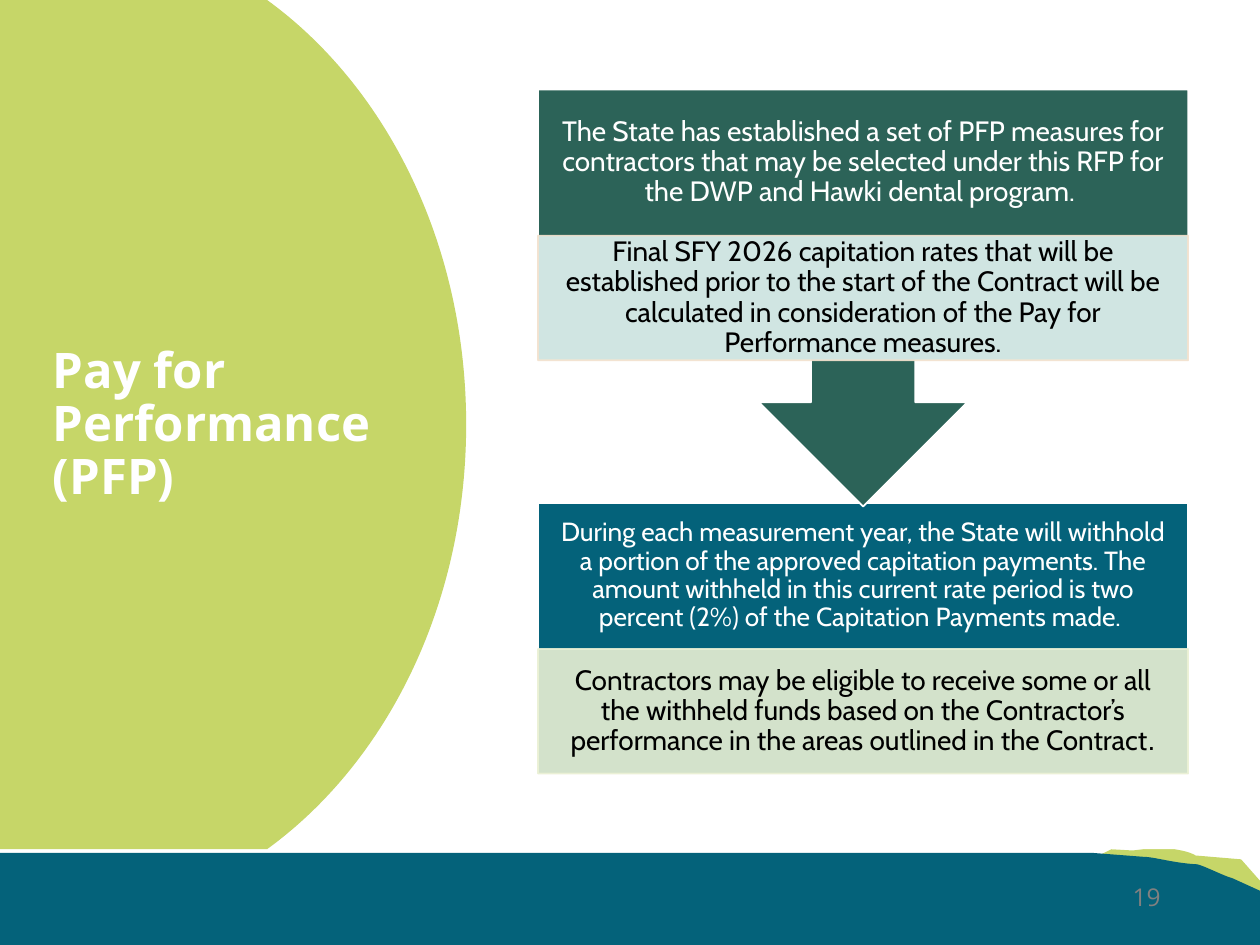
from lxml import etree
from pptx import Presentation
from pptx.dml.color import RGBColor
from pptx.enum.shapes import MSO_SHAPE
from pptx.enum.text import MSO_ANCHOR, PP_ALIGN
from pptx.oxml.ns import qn
from pptx.util import Inches, Pt

RECT, CALLOUT = MSO_SHAPE.RECTANGLE, MSO_SHAPE.UP_ARROW_CALLOUT
MIDDLE = MSO_ANCHOR.MIDDLE
LEFT, CENTER, RIGHT = PP_ALIGN.LEFT, PP_ALIGN.CENTER, PP_ALIGN.RIGHT
COLORS = {name: RGBColor.from_string(value) for name, value in {
    "white": "FFFFFF", "black": "000000", "gray": "808080",
    "lime": "C6D668", "teal": "04627A", "green": "2C6358",
    "pale_lime": "EAF0D4", "pale_green": "E2F4F1", "sand": "F3E1CD",
}.items()}
UNITS = 1000  # outline units per inch

prs = Presentation()
prs.slide_width, prs.slide_height = Inches(10), Inches(7.5)
slide = prs.slides.add_slide(prs.slide_layouts[5])
shapes = slide.shapes


def paint(shape, fill, line=None, opacity=None):
    """Set fill and line, with an optional opacity in percent for both."""
    shape.shadow.inherit = False
    shape.fill.solid()
    shape.fill.fore_color.rgb = COLORS[fill]
    if line:
        shape.line.color.rgb = COLORS[line]
        shape.line.width = Pt(1)
    else:
        shape.line.fill.background()
    if opacity:
        for color in shape._element.spPr.iter(qn("a:srgbClr")):
            etree.SubElement(color, qn("a:alpha"), val=str(opacity * 1000))


def draw_outline(start, segments, fill):
    """Draw a closed outline; six numbers in a segment make a Bezier curve."""
    points = [(segment[i] * UNITS, segment[i + 1] * UNITS)
              for segment in segments for i in range(0, len(segment), 2)]
    builder = shapes.build_freeform(start[0] * UNITS, start[1] * UNITS,
                                    scale=Inches(1) / UNITS)
    builder.add_line_segments(points, close=True)
    outline = builder.convert_to_shape()
    # Join the three points of each curve into one curve element
    lines = iter(list(outline._element.iter(qn("a:lnTo"))))
    for segment in segments:
        first = next(lines)
        if len(segment) == 6:
            first.tag = qn("a:cubicBezTo")
            for extra in (next(lines), next(lines)):
                first.append(extra[0])
                extra.getparent().remove(extra)
    paint(outline, fill)


# Footer hills
draw_outline((8.82, 6.74),
             [(8.62, 6.84), (10.01, 7.11), (10, 6.99), (9.85, 6.82), (9.49, 6.79),
              (9.42, 6.75, 9.36, 6.75, 9.23, 6.72), (8.99, 6.75)], "lime")
draw_outline((0, 6.77),
             [(8.68, 6.77), (9.07, 6.8), (9.16, 6.8, 9.31, 6.85, 9.5, 6.86),
              (9.53, 6.86, 9.73, 6.96, 9.78, 6.97), (10, 7.07), (10, 7.5), (0, 7.5)], "teal")

# Content area and the rounded title panel
content_height = 6.74
content_area = shapes.add_shape(RECT, 0, 0, prs.slide_width, Inches(content_height))
paint(content_area, "white")
draw_outline((0, 0),
             [(2.12, 0), (3.07, 0.69, 3.7, 1.94, 3.7, 3.37),
              (3.7, 4.8, 3.07, 6.05, 2.12, content_height), (0, content_height)], "lime")

# Title, brought in front of its panel
title = shapes.title
shapes._spTree.append(title._element)
title.left, title.top, title.width, title.height = map(Inches, (0.32, 0.64, 3.39, 5.47))
title.text_frame.word_wrap = True
title.text_frame.vertical_anchor = MIDDLE
heading = title.text_frame.paragraphs[0]
heading.text = "Pay for Performance (PFP)"
heading.alignment = LEFT
heading.line_spacing = 0.9
heading.font.name, heading.font.size, heading.font.bold = "Open Sans", Pt(28), True
heading.font.color.rgb = COLORS["white"]

# Two steps, the lower one first so that the arrow lies over it
column_left, column_width = Inches(4.27), Inches(5.16)
head_height, detail_height = Inches(1.16), Inches(0.99)
steps = [
    (3.99, RECT, 0, 2.15, "teal", "pale_lime", "pale_lime", 15,
     ["During each measurement year, the State will withhold a portion of the approved "
      "capitation payments. The amount withheld in this current rate period is two percent "
      "(2%) of the Capitation Payments made. "],
     ["Contractors may be eligible to receive some or all the withheld funds based on the "
      "Contractor’s performance in the areas outlined in the Contract", "."]),
    (0.71, CALLOUT, 180, 3.31, "green", "pale_green", "sand", 16,
     ["The State has established a set of PFP measures for contractors that may be selected "
      "under this RFP for the DWP and Hawki dental program. "],
     ["Final SFY 2026 capitation rates that will be established prior to the start of the "
      "Contract will be calculated in consideration of the Pay for Performance measures."]),
]
for (top, outline, rotation, height, fill, detail_fill, detail_line,
     head_size, head, detail) in steps:
    top = Inches(top)
    block = shapes.add_shape(outline, column_left, top, column_width, Inches(height))
    block.rotation = rotation
    paint(block, fill, "white")
    head_box = shapes.add_textbox(column_left, top, column_width, head_height)
    detail_box = shapes.add_shape(RECT, column_left, top + head_height,
                                  column_width, detail_height)
    paint(detail_box, detail_fill, detail_line, opacity=90)

    for box, texts, size, color, inset in (
            (head_box, head, head_size, "white", 0.12),
            (detail_box, detail, 16, "black", 0.02)):
        frame = box.text_frame
        frame.word_wrap = True
        frame.vertical_anchor = MIDDLE
        frame.margin_left = frame.margin_right = Inches(0.12)
        frame.margin_top = frame.margin_bottom = Inches(inset)
        paragraph = frame.paragraphs[0]
        paragraph.alignment = CENTER
        paragraph.line_spacing = 0.9
        paragraph.font.size = Pt(size)
        paragraph.font.color.rgb = COLORS[color]
        for text, font_name in zip(texts, ("Cabin", "Arial")):
            run = paragraph.add_run()
            run.text, run.font.name = text, font_name

# Page number
page_box = shapes.add_textbox(Inches(7.06), Inches(6.95), Inches(2.25), Inches(0.4))
page_box.text_frame.word_wrap = True
page_number = page_box.text_frame.paragraphs[0]
page_number.text = "19"
page_number.alignment = RIGHT
page_number.font.name, page_number.font.size = "Open Sans", Pt(14)
page_number.font.color.rgb = COLORS["gray"]

prs.save("out.pptx")
